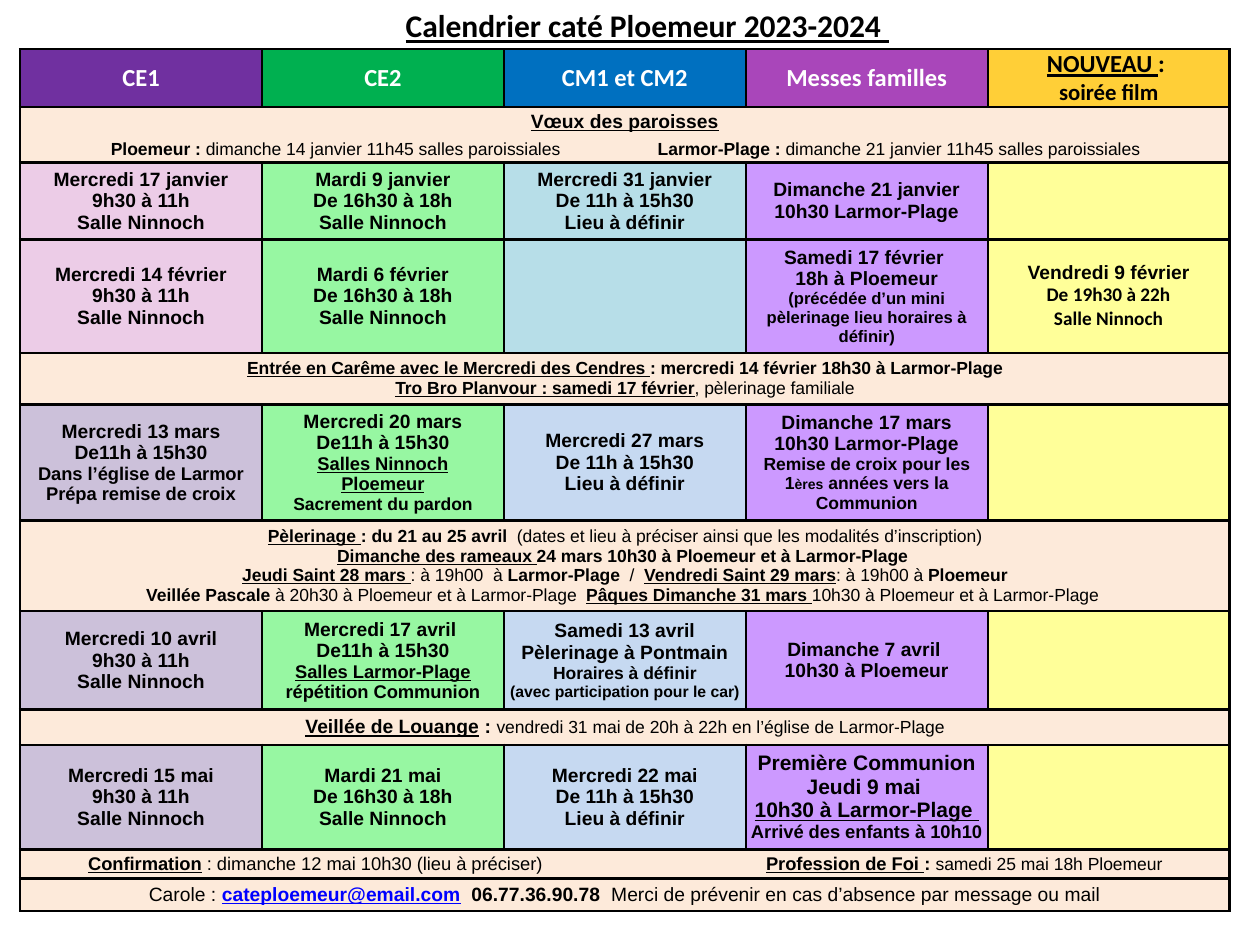
from dataclasses import dataclass
from lxml.etree import SubElement
from pptx import Presentation
from pptx.dml.color import RGBColor
from pptx.enum.text import MSO_ANCHOR, PP_ALIGN
from pptx.oxml.ns import qn
from pptx.util import Inches, Pt

BLACK = RGBColor(0, 0, 0)
WHITE = RGBColor(255, 255, 255)
BLUE = RGBColor(0, 0, 255)
PURPLE = RGBColor(0x70, 0x30, 0xA0)
GREEN = RGBColor(0x00, 0xB0, 0x50)
OCEAN = RGBColor(0x00, 0x70, 0xC0)
VIOLET = RGBColor(0xA9, 0x46, 0xBA)
GOLD = RGBColor(0xFF, 0xCF, 0x37)
PEACH = RGBColor(0xFD, 0xEA, 0xDA)
PINK = RGBColor(0xEC, 0xCC, 0xE7)
LAVENDER = RGBColor(0xCC, 0xC1, 0xDA)
MINT = RGBColor(0x97, 0xF7, 0xA2)
AQUA = RGBColor(0xB7, 0xDE, 0xE8)
SKY = RGBColor(0xC6, 0xD9, 0xF1)
LILAC = RGBColor(0xCC, 0x99, 0xFF)
YELLOW = RGBColor(0xFF, 0xFF, 0x99)

HEADER = [PURPLE, GREEN, OCEAN, VIOLET, GOLD]
WINTER = [PINK, MINT, AQUA, LILAC, YELLOW]
SPRING = [LAVENDER, MINT, SKY, LILAC, YELLOW]


@dataclass
class Run:
    text: str
    size: float = 11
    bold: bool = True
    underline: bool = False
    font: str = "Arial"
    color: RGBColor = BLACK


def plain(text, size=10):
    return Run(text, size, bold=False)


def bold(text, size=10):
    return Run(text, size)


def under(text, size=10):
    return Run(text, size, underline=True)


def head(text, size=14, color=WHITE, underline=False):
    return Run(text, size, True, underline, "Calibri", color)


@dataclass
class Row:
    height: float
    cells: list
    fills: list = None
    inset: bool = False
    tabs: tuple = ()


ROWS = [
    Row(0.46, [["CE1"], ["CE2"], ["CM1 et CM2"], ["Messes familles"],
               [[head("NOUVEAU ", color=BLACK, underline=True), head(": ", color=BLACK)],
                [head("soirée film", 13, BLACK)]]], HEADER),
    Row(0.44, [[under("Vœux des paroisses", 11)],
               [bold("\tPloemeur : "), plain("dimanche 14 janvier 11h45 salles paroissiales"),
                bold("\tLarmor-Plage : "), plain("dimanche 21 janvier 11h45 salles paroissiales")]],
        tabs=(0.72, 5.06)),
    Row(0.61, [["Mercredi 17 janvier", "9h30 à 11h", "Salle Ninnoch"],
               ["Mardi 9 janvier", "De 16h30 à 18h", "Salle Ninnoch"],
               ["Mercredi 31 janvier", "De 11h à 15h30", "Lieu à définir"],
               ["Dimanche 21 janvier", "10h30 Larmor-Plage"], []], WINTER, True),
    Row(0.9, [["Mercredi 14 février", "9h30 à 11h", "Salle Ninnoch"],
              ["Mardi 6 février", "De 16h30 à 18h", "Salle Ninnoch"], [],
              ["Samedi 17 février ", "18h à Ploemeur",
               [bold("(précédée d’un mini pèlerinage lieu horaires à définir)", 9.5)]],
              ["Vendredi 9 février", [head("De 19h30 à 22h", 11, BLACK)],
               [head("Salle Ninnoch", 11, BLACK)]]], WINTER, True),
    Row(0.41, [[under("Entrée en Carême avec le Mercredi des Cendres "),
                bold(": mercredi 14 février 18h30 à Larmor-Plage")],
               [under("Tro Bro Planvour : samedi 17 février"),
                plain(", pèlerinage familiale")]], inset=True),
    Row(0.92, [["Mercredi 13 mars", "De11h à 15h30", [bold("Dans l’église de Larmor", 10.5)],
                [bold("Prépa remise de croix", 10.5)]],
               ["Mercredi 20 mars", "De11h à 15h30", [under("Salles Ninnoch Ploemeur", 10.5)],
                [bold("Sacrement du pardon")]],
               ["Mercredi 27 mars", "De 11h à 15h30", "Lieu à définir"],
               ["Dimanche 17 mars", "10h30 Larmor-Plage",
                [bold("Remise de croix pour les 1"), bold("ères", 8),
                 bold(" années vers la Communion")]], []], SPRING, True),
    Row(0.72, [[under("Pèlerinage "), bold(": du 21 au 25 avril  "),
                plain("(dates et lieu à préciser ainsi que les modalités d’inscription)")],
               [under("Dimanche des rameaux "),
                bold("24 mars 10h30 à Ploemeur et à Larmor-Plage ")],
               [under("Jeudi Saint 28 mars "), plain(": à 19h00  à "), bold("Larmor-Plage"),
                plain("  /  "), under("Vendredi Saint 29 mars"), plain(": à 19h00 à"),
                bold(" Ploemeur")],
               [bold("Veillée Pascale "), plain("à 20h30 à Ploemeur et à Larmor-Plage  "),
                under("Pâques Dimanche 31 mars "),
                plain("10h30 à Ploemeur et à Larmor-Plage ")]], inset=True),
    Row(0.78, [["Mercredi 10 avril", "9h30 à 11h", "Salle Ninnoch"],
               ["Mercredi 17 avril ", "De11h à 15h30", [under("Salles Larmor-Plage", 10.5)],
                [bold("répétition Communion", 10.5)]],
               ["Samedi 13 avril", "Pèlerinage à Pontmain", [bold("Horaires à définir")],
                [bold("(avec participation pour le car)", 9)]],
               ["Dimanche 7 avril ", "10h30 à Ploemeur"], []], SPRING),
    Row(0.28, [[under("Veillée de Louange", 11), bold(" : ", 11),
                plain("vendredi 31 mai de 20h à 22h en l’église de Larmor-Plage")]]),
    Row(0.83, [["Mercredi 15 mai", "9h30 à 11h", "Salle Ninnoch"],
               ["Mardi 21 mai", "De 16h30 à 18h", "Salle Ninnoch"],
               ["Mercredi 22 mai", "De 11h à 15h30", "Lieu à définir"],
               [[bold("Première Communion", 12)], [bold("Jeudi 9 mai ", 12)],
                [under("10h30 à Larmor-Plage ", 12)],
                [bold("Arrivé des enfants à 10h10", 10.5)]], []], SPRING),
    Row(0.23, [[plain("\t"), under("Confirmation", 10.5),
                plain(" : dimanche 12 mai 10h30 (lieu à préciser)\t", 10.5),
                under("Profession de Foi ", 10.5), bold(": ", 10.5),
                plain("samedi 25 mai 18h Ploemeur")]], tabs=(0.54, 5.92)),
    Row(0.26, [[plain("Carole : ", 11),
                Run("cateploemeur@email.com", underline=True, color=BLUE),
                bold("  06.77.36.90.78  ", 11),
                plain("Merci de prévenir en cas d’absence par message ou mail", 11)]]),
]


def add_run(p, run):
    r = p.add_run()
    r.text = run.text
    r.font.size = Pt(run.size)
    r.font.bold = run.bold
    r.font.underline = run.underline
    r.font.name = run.font
    r.font.color.rgb = run.color


def add_tabs(p, tabs):
    tab_list = SubElement(p._p.get_or_add_pPr(), qn("a:tabLst"))
    for pos in tabs:
        SubElement(tab_list, qn("a:tab"), pos=str(Inches(pos)), algn="l")


def write_lines(cell, lines, row):
    tf = cell.text_frame
    for i, line in enumerate(lines):
        p = tf.add_paragraph() if i else tf.paragraphs[0]
        p.alignment = PP_ALIGN.CENTER
        if i and row.tabs:
            p.space_before = Pt(4)
        if isinstance(line, str):
            line = [head(line) if row.fills is HEADER else Run(line)]
        if row.tabs and any("\t" in run.text for run in line):
            p.alignment = PP_ALIGN.LEFT
            add_tabs(p, row.tabs)
        for run in line:
            add_run(p, run)


def format_cell(cell, color, inset):
    cell.vertical_anchor = MSO_ANCHOR.MIDDLE
    if not inset:
        cell.margin_left = cell.margin_right = cell.margin_top = cell.margin_bottom = 0
    tcPr = cell._tc.get_or_add_tcPr()
    for side in ("a:lnL", "a:lnR", "a:lnT", "a:lnB"):
        ln = SubElement(tcPr, qn(side), w=str(Pt(1.5)))
        SubElement(SubElement(ln, qn("a:solidFill")), qn("a:srgbClr"), val=str(BLACK))
    cell.fill.solid()
    cell.fill.fore_color.rgb = color


def add_calendar(s):
    height = sum(row.height for row in ROWS)
    table = s.shapes.add_table(len(ROWS), len(HEADER), Inches(0.16), Inches(0.39),
                               Inches(9.6), Inches(height)).table
    table.first_row = table.horz_banding = False
    for i, row in enumerate(ROWS):
        table.rows[i].height = Inches(row.height)
        cells = list(table.rows[i].cells)
        for cell, color in zip(cells, row.fills or [PEACH] * len(cells)):
            format_cell(cell, color, row.inset)
        if row.fills:
            for cell, lines in zip(cells, row.cells):
                write_lines(cell, lines, row)
        else:
            cells[0].merge(cells[-1])
            write_lines(cells[0], row.cells, row)


def add_title(s, text):
    title = s.shapes.title
    title.left, title.top = Inches(3.12), Inches(0)
    title.width, title.height = Inches(4.3), Inches(0.4)
    p = title.text_frame.paragraphs[0]
    p.alignment = PP_ALIGN.LEFT
    add_run(p, head(text, 18, BLACK, True))


def main():
    prs = Presentation()
    prs.slide_width, prs.slide_height = Inches(10), Inches(7.5)
    s = prs.slides.add_slide(prs.slide_layouts[5])
    add_title(s, "Calendrier caté Ploemeur 2023-2024 ")
    add_calendar(s)
    prs.save("out.pptx")


if __name__ == "__main__":
    main()
